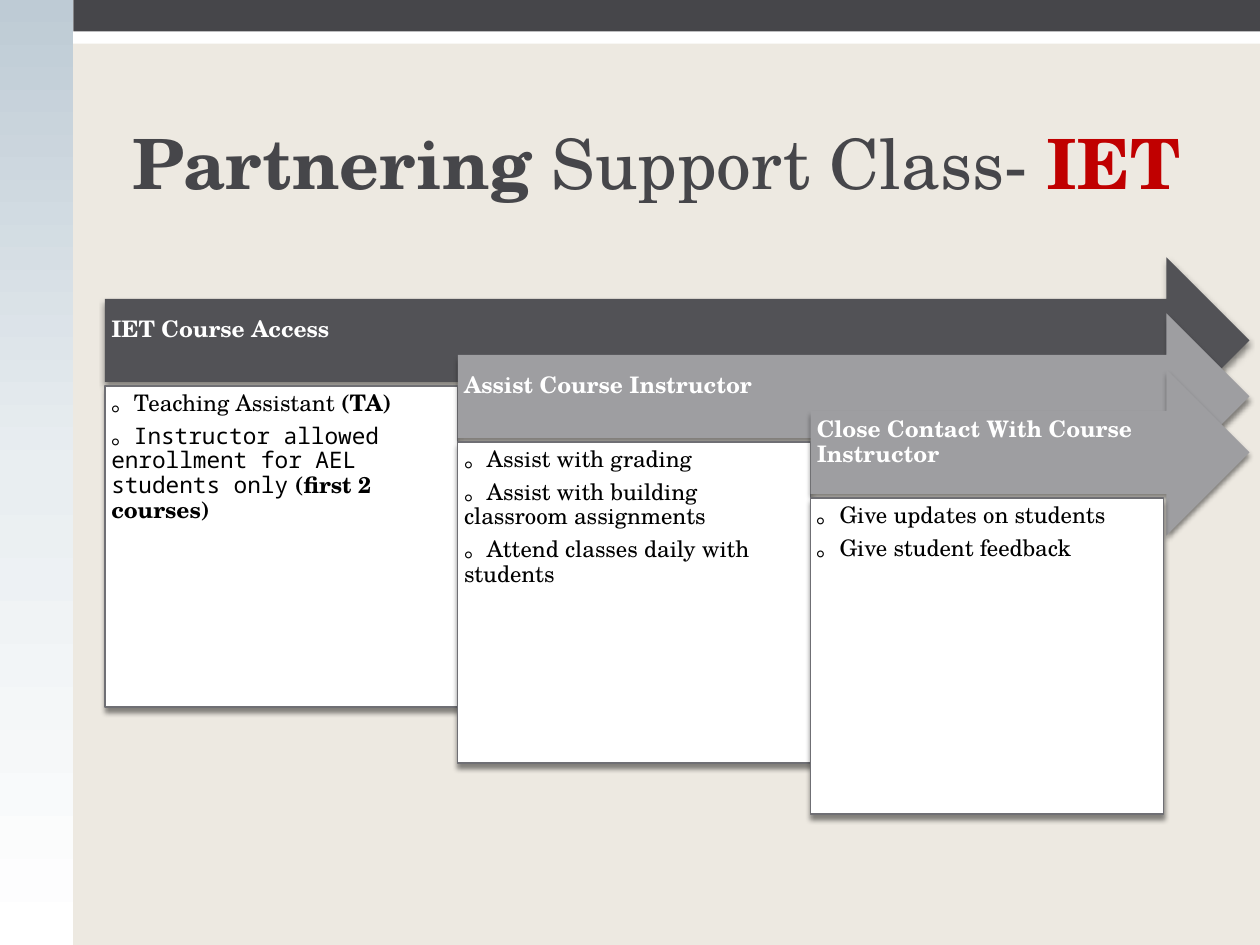
from copy import deepcopy
from dataclasses import dataclass

from lxml import etree
from pptx import Presentation
from pptx.dml.color import RGBColor
from pptx.enum.shapes import MSO_SHAPE
from pptx.enum.text import MSO_ANCHOR, MSO_AUTO_SIZE, PP_ALIGN
from pptx.oxml.ns import qn
from pptx.util import Pt

RECTANGLE, RIGHT_ARROW = MSO_SHAPE.RECTANGLE, MSO_SHAPE.RIGHT_ARROW
TOP, MIDDLE, BOTTOM = MSO_ANCHOR.TOP, MSO_ANCHOR.MIDDLE, MSO_ANCHOR.BOTTOM
LEFT, CENTER = PP_ALIGN.LEFT, PP_ALIGN.CENTER
NO_AUTOFIT = MSO_AUTO_SIZE.NONE


@dataclass(frozen=True)
class Theme:
    background: str = "EDE9E1"
    white: str = "FFFFFF"
    black: str = "000000"
    charcoal: str = "46464A"
    outline: str = "6F6F74"
    accent: str = "C00000"
    dark_arrow: str = "525256"
    light_arrow: str = "9E9EA1"
    side_gradient: tuple = ((0, "BECBD5"), (0.5, "E9EEF1"), (1, "FFFFFF"))
    font: str = "TeX Gyre Schola"
    mono: str = "Noto Sans Mono"
    title_size: float = 39.6
    text_size: float = 13


THEME = Theme()

# Run styles
PLAIN = {"name": THEME.font, "bold": False}
BOLD = {"name": THEME.font, "bold": True}
MONO = {"name": THEME.mono, "bold": False}
BULLET = ("。", MONO)

# Text frame and paragraph formats
HEADING_FRAME = {
    "vertical_anchor": MIDDLE, "word_wrap": True, "margin_left": Pt(3.6),
    "margin_top": Pt(3.6), "margin_right": Pt(20), "margin_bottom": Pt(15),
}
LIST_FRAME = HEADING_FRAME | {
    "vertical_anchor": TOP, "margin_right": Pt(3.6), "margin_bottom": Pt(3.6),
}
TITLE_FRAME = {"vertical_anchor": BOTTOM, "word_wrap": True, "auto_size": NO_AUTOFIT}
STAGE_PARAGRAPH = {"alignment": LEFT, "line_spacing": 0.9, "space_after": Pt(4.55)}
TITLE_PARAGRAPH = {"alignment": CENTER}

# Diagram: each stage starts one column right and one step down
STAGE_LEFT, STAGE_TOP, STAGE_RIGHT = 60, 147, 714
COLUMN_WIDTH, STEP_DOWN = 201.6, 32
ARROW_HEIGHT, LIST_OFFSET = 95, 73.5

STAGES = [
    ("IET Course Access", THEME.dark_arrow, 183.6, [
        [BULLET, ("Teaching Assistant ", PLAIN), ("(TA)", BOLD)],
        [BULLET, ("Instructor allowed enrollment for AEL students only", MONO),
         (" (first 2 courses)", BOLD)],
    ]),
    ("Assist Course Instructor", THEME.light_arrow, 183.6, [
        [BULLET, ("Assist with grading", PLAIN)],
        [BULLET, ("Assist with building classroom assignments", PLAIN)],
        [BULLET, ("Attend classes daily with students", PLAIN)],
    ]),
    ("Close Contact With Course Instructor", THEME.light_arrow, 180.7, [
        [BULLET, ("Give updates on students", PLAIN)],
        [BULLET, ("Give student feedback", PLAIN)],
    ]),
]


def apply(target, formats):
    for name, value in formats.items():
        setattr(target, name, value)


def rgb(color):
    return RGBColor.from_string(color)


class SlideBuilder:
    def __init__(self, slide, theme):
        self.slide = slide
        self.theme = theme

    def background(self):
        fill = self.slide.background.fill
        fill.solid()
        fill.fore_color.rgb = rgb(self.theme.background)

    def shape(self, kind, left, top, width, height, color):
        shape = self.slide.shapes.add_shape(
            kind, Pt(left), Pt(top), Pt(width), Pt(height))
        shape.shadow.inherit = False
        shape.fill.solid()
        shape.fill.fore_color.rgb = rgb(color)
        shape.line.fill.background()
        return shape

    def gradient(self, shape, stops):
        fill = shape.fill
        fill.gradient()
        fill.gradient_angle = 270
        stop_list = next(shape.element.spPr.iter(qn("a:gsLst")))
        stop_list.append(deepcopy(stop_list[-1]))
        for stop, (position, color) in zip(fill.gradient_stops, stops):
            stop.position = position
            stop.color.rgb = rgb(color)

    def shadow(self, shape):
        effects = shape.element.spPr.find(qn("a:effectLst"))
        outer = etree.SubElement(
            effects, qn("a:outerShdw"), blurRad=str(Pt(3)), dist=str(Pt(2.4)),
            dir="5400000", rotWithShape="0")
        color = etree.SubElement(outer, qn("a:srgbClr"), val=self.theme.black)
        etree.SubElement(color, qn("a:alpha"), val="45000")

    def text(self, shape, paragraphs, frame_format, paragraph_format, size, color):
        frame = shape.text_frame
        apply(frame, frame_format)
        for index, runs in enumerate(paragraphs):
            paragraph = frame.add_paragraph() if index else frame.paragraphs[0]
            apply(paragraph, paragraph_format)
            for content, style in runs:
                run = paragraph.add_run()
                run.text = content
                apply(run.font, {"size": Pt(size)} | style)
                run.font.color.rgb = rgb(color)

    def title(self, runs, left, top, width, height):
        title = self.slide.shapes.title
        apply(title, {"left": Pt(left), "top": Pt(top),
                      "width": Pt(width), "height": Pt(height)})
        self.text(title, [runs], TITLE_FRAME, TITLE_PARAGRAPH,
                  self.theme.title_size, self.theme.charcoal)
        return title

    def arrow(self, heading, color, left, top):
        arrow = self.shape(RIGHT_ARROW, left, top, STAGE_RIGHT - left,
                           ARROW_HEIGHT, color)
        self.shadow(arrow)
        self.text(arrow, [[(heading, BOLD)]], HEADING_FRAME, STAGE_PARAGRAPH,
                  self.theme.text_size, self.theme.white)

    def list_box(self, items, left, top, height):
        box = self.shape(RECTANGLE, left, top, COLUMN_WIDTH, height, self.theme.white)
        box.line.color.rgb = rgb(self.theme.outline)
        box.line.width = Pt(0.79)
        self.shadow(box)
        self.text(box, items, LIST_FRAME, STAGE_PARAGRAPH,
                  self.theme.text_size, self.theme.black)


def main():
    presentation = Presentation()
    presentation.slide_width, presentation.slide_height = Pt(720), Pt(540)
    slide = presentation.slides.add_slide(presentation.slide_layouts[5])
    builder = SlideBuilder(slide, THEME)

    # Background, top strip, side band and top bar
    builder.background()
    builder.shape(RECTANGLE, 0, 0, 720, 25, THEME.white)
    side_band = builder.shape(RECTANGLE, 0, 0, 42, 540, THEME.white)
    builder.gradient(side_band, THEME.side_gradient)
    builder.shape(RECTANGLE, 42, 0, 678, 18, THEME.charcoal)

    # Title
    title = builder.title(
        [("Partnering", BOLD), (" Support Class- ", PLAIN), ("IET", BOLD)],
        60, 30, 630, 90)
    title.text_frame.paragraphs[0].runs[-1].font.color.rgb = rgb(THEME.accent)

    # Stages
    for index, (heading, color, list_height, items) in enumerate(STAGES):
        left = STAGE_LEFT + index * COLUMN_WIDTH
        top = STAGE_TOP + index * STEP_DOWN
        builder.arrow(heading, color, left, top)
        builder.list_box(items, left, top + LIST_OFFSET, list_height)

    presentation.save("out.pptx")


if __name__ == "__main__":
    main()
